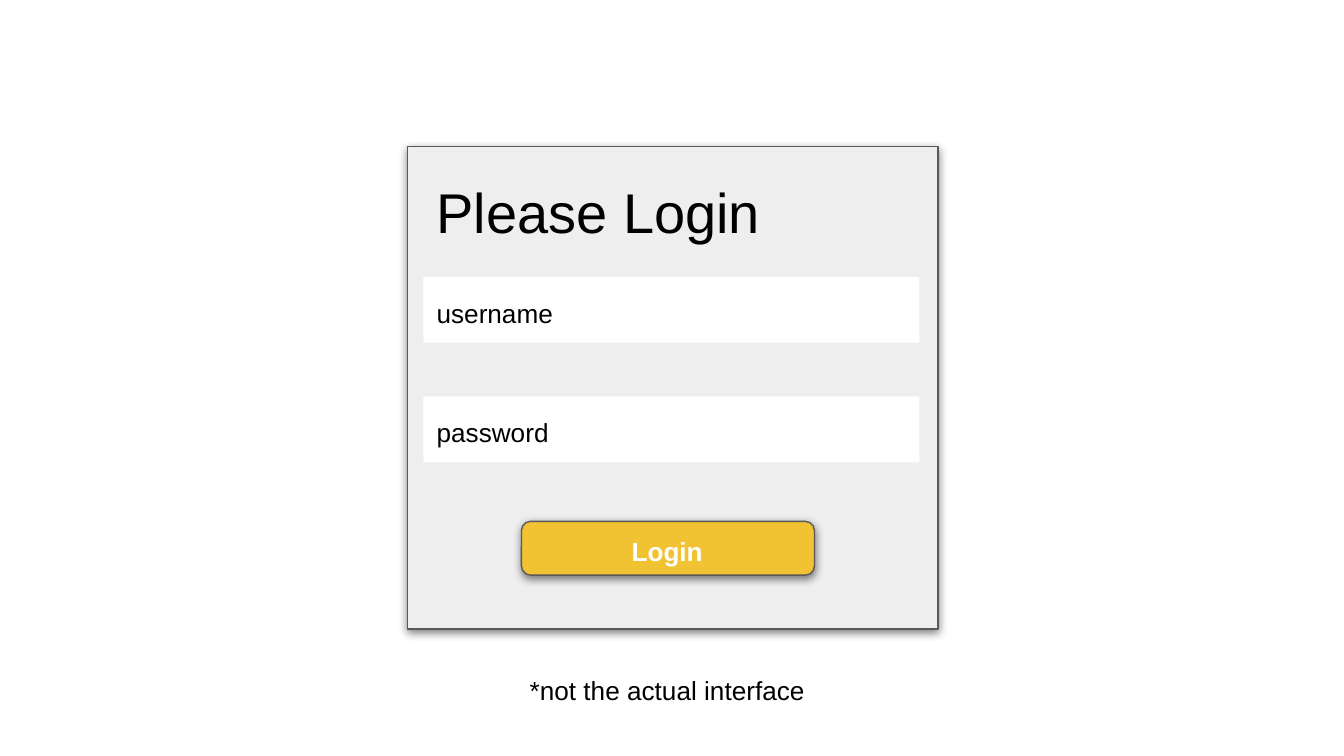
from lxml import etree
from pptx import Presentation
from pptx.dml.color import RGBColor
from pptx.enum.shapes import MSO_SHAPE as SHAPE
from pptx.enum.text import MSO_ANCHOR as ANCHOR, PP_ALIGN as ALIGN
from pptx.util import Inches, Pt

# Content
TITLE = "Please Login"
FIELDS = ["username", "password"]
BUTTON = "Login"
NOTE = "*not the actual interface"

# Layout in inches
FIELD_LEFT, FIELD_TOP, FIELD_STEP = 3.15, 2.06, 0.89

SHADOW = """<a:effectLst xmlns:a="http://schemas.openxmlformats.org/drawingml/2006/main">
<a:outerShdw blurRad="57150" dist="19050" dir="5400000" algn="bl" rotWithShape="0">
<a:srgbClr val="000000"><a:alpha val="50000"/></a:srgbClr></a:outerShdw></a:effectLst>"""


def color(hex_value):
    return RGBColor.from_string(hex_value)


def add_box(slide, kind, box, fill, raised=False):
    shape = slide.shapes.add_shape(kind, *map(Inches, box))
    shape.fill.solid()
    shape.fill.fore_color.rgb = color(fill)
    shape.shadow.inherit = False
    if raised:
        shape.line.color.rgb = color("595959")
        shape.line.width = Pt(0.75)
        properties = shape._element.spPr
        empty_effects = properties.find("{*}effectLst")
        properties.replace(empty_effects, etree.fromstring(SHADOW))
    else:
        shape.line.fill.background()
    return shape


def add_label(slide, text, box, size=14, ink="000000", align=ALIGN.LEFT, bold=False):
    frame = slide.shapes.add_textbox(*map(Inches, box)).text_frame
    frame.word_wrap = True
    frame.vertical_anchor = ANCHOR.TOP
    frame.margin_left = frame.margin_right = Inches(0.1)
    frame.margin_top = frame.margin_bottom = Inches(0.1)
    frame.text = text
    paragraph = frame.paragraphs[0]
    paragraph.alignment = align
    font = paragraph.runs[0].font
    font.name, font.size, font.bold = "Arial", Pt(size), bold
    font.color.rgb = color(ink)


# Widescreen slide, 16:9
deck = Presentation()
deck.slide_width = Inches(10)
deck.slide_height = deck.slide_width * 9 // 16
slide = deck.slides.add_slide(deck.slide_layouts[6])

# Login panel
add_box(slide, SHAPE.RECTANGLE, (3.03, 1.09, 3.95, 3.59), "EEEEEE", raised=True)

# Input fields
for row, field in enumerate(FIELDS):
    top = FIELD_TOP + row * FIELD_STEP
    add_box(slide, SHAPE.RECTANGLE, (FIELD_LEFT, top, 3.69, 0.49), "FFFFFF")
    add_label(slide, field, (FIELD_LEFT, top + 0.05, 3.62, 0.4))

# Heading
add_label(slide, TITLE, (FIELD_LEFT, 1.22, 3.37, 0.35), size=30)

# Button
button = add_box(slide, SHAPE.ROUNDED_RECTANGLE, (3.88, 3.88, 2.18, 0.4), "F1C232", raised=True)
button.adjustments[0] = 0.17
add_label(slide, BUTTON, (4.05, 3.88, 1.83, 0.35), ink="FFFFFF", align=ALIGN.CENTER, bold=True)

# Note below the panel
add_label(slide, NOTE, (3.77, 4.92, 2.39, 0.44), align=ALIGN.CENTER)

deck.save("out.pptx")
